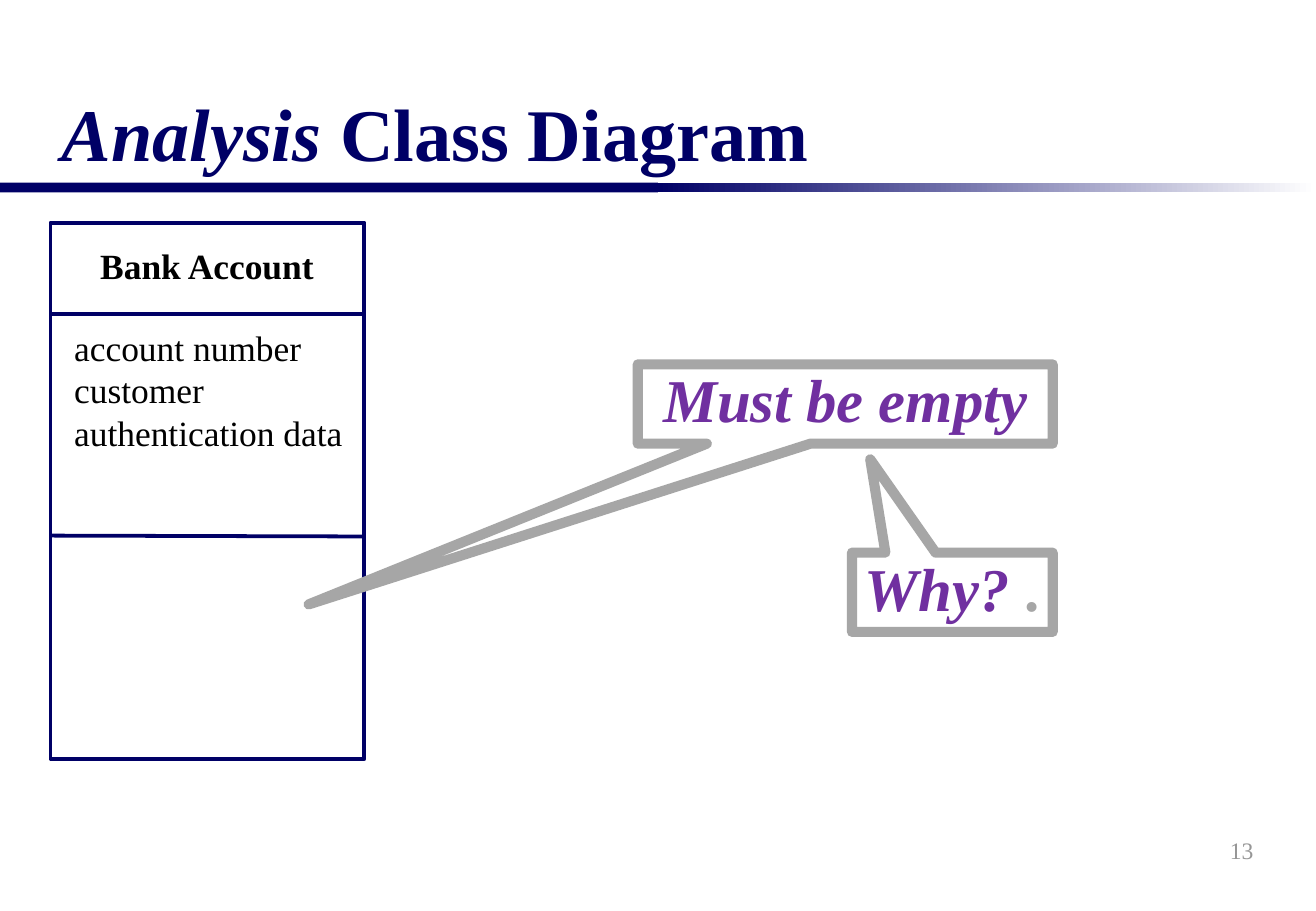
from lxml import etree
from pptx import Presentation
from pptx.dml.color import RGBColor
from pptx.enum import shapes, text
from pptx.oxml import ns
from pptx.util import Pt

COLORS = {
    "navy": "000066", "white": "FFFFFF", "black": "000000",
    "gray": "A6A6A6", "purple": "7030A0", "number": "969696",
}
FONT = "Times New Roman"
ALIGN = text.PP_ALIGN
ANCHOR = text.MSO_ANCHOR


def color(name):
    return RGBColor.from_string(COLORS[name])


def write(shape, lines, size, align=ALIGN.LEFT, anchor=ANCHOR.TOP,
          inset=(7.2, 3.6), wrap=False, spacing=None):
    """Fill a shape with lines, each a list of (words, color, bold, italic)."""
    frame = shape.text_frame
    frame.word_wrap = wrap
    frame.vertical_anchor = anchor
    frame.margin_left = frame.margin_right = Pt(inset[0])
    frame.margin_top = frame.margin_bottom = Pt(inset[1])
    for index, line in enumerate(lines):
        paragraph = frame.add_paragraph() if index else frame.paragraphs[0]
        paragraph.alignment = align
        paragraph.line_spacing = spacing
        for words, name, bold, italic in line:
            run = paragraph.add_run()
            run.text = words
            run.font.name = FONT
            run.font.size = Pt(size)
            run.font.bold = bold
            run.font.italic = italic
            run.font.color.rgb = color(name)


presentation = Presentation()
presentation.slide_width = Pt(780)
presentation.slide_height = Pt(540)
slide = presentation.slides.add_slide(presentation.slide_layouts[6])
items = slide.shapes

# Rule under the title: solid half, then a half fading to white
for left in (0, 390):
    bar = items.add_shape(shapes.MSO_SHAPE.RECTANGLE,
                          Pt(left), Pt(108.3), Pt(390), Pt(5.7))
    bar.shadow.inherit = False
    bar.line.fill.background()
    if left == 0:
        bar.fill.solid()
        bar.fill.fore_color.rgb = color("navy")
    else:
        bar.fill.gradient()
        bar.fill.gradient_angle = 0
        for stop, name in zip(bar.fill.gradient_stops, ("navy", "white")):
            stop.color.rgb = color(name)

# Slide number and title
number = items.add_textbox(Pt(587.5), Pt(486), Pt(162.5), Pt(36))
write(number, [[("13", "number", False, False)]], 14, ALIGN.RIGHT, ANCHOR.MIDDLE)
title = items.add_textbox(Pt(29.5), Pt(21), Pt(720), Pt(87))
write(title, [[("Analysis", "navy", True, True),
               (" Class Diagram", "navy", True, False)]],
      44, anchor=ANCHOR.BOTTOM, wrap=True)

# Class box with its two dividers
class_box = items.add_shape(shapes.MSO_SHAPE.RECTANGLE,
                            Pt(30), Pt(132), Pt(186), Pt(318))
class_box.shadow.inherit = False
class_box.fill.background()
class_box.line.color.rgb = color("navy")
class_box.line.width = Pt(2.25)
for start, end in ((186, 186), (317.5, 318)):
    divider = items.add_connector(shapes.MSO_CONNECTOR.STRAIGHT,
                                  Pt(30), Pt(start), Pt(216), Pt(end))
    divider.line.color.rgb = color("navy")
    divider.line.width = Pt(2.25)
    etree.SubElement(divider._element.spPr, ns.qn("a:effectLst"))

# Class name and attributes
class_name = items.add_textbox(Pt(59), Pt(145), Pt(127.5), Pt(25))
write(class_name, [[("Bank Account", "black", True, False)]],
      21, ALIGN.CENTER, inset=(0, 0))
attributes = items.add_textbox(Pt(44), Pt(193), Pt(161), Pt(76))
write(attributes, [[(words, "black", False, False)] for words in
                   ("account number", "customer", "authentication data")],
      21, inset=(0, 0))

# Callouts: left, top, width, pointer tip, words
callouts = [
    (378, 216, 246, (-1.293, 2.528), [("Must be empty", "purple", True, True)]),
    (505, 327.6, 119, (-0.409, -1.677), [("Why? ", "purple", True, True),
                                         (".", "gray", True, False)]),
]
for left, top, width, tip, words in callouts:
    callout = items.add_shape(shapes.MSO_SHAPE.RECTANGULAR_CALLOUT,
                              Pt(left), Pt(top), Pt(width), Pt(47))
    callout.adjustments[0], callout.adjustments[1] = tip
    callout.shadow.inherit = False
    callout.fill.solid()
    callout.fill.fore_color.rgb = color("white")
    callout.line.color.rgb = color("gray")
    callout.line.width = Pt(6)
    write(callout, [words], 36, ALIGN.CENTER, spacing=0.9)

presentation.save("out.pptx")
